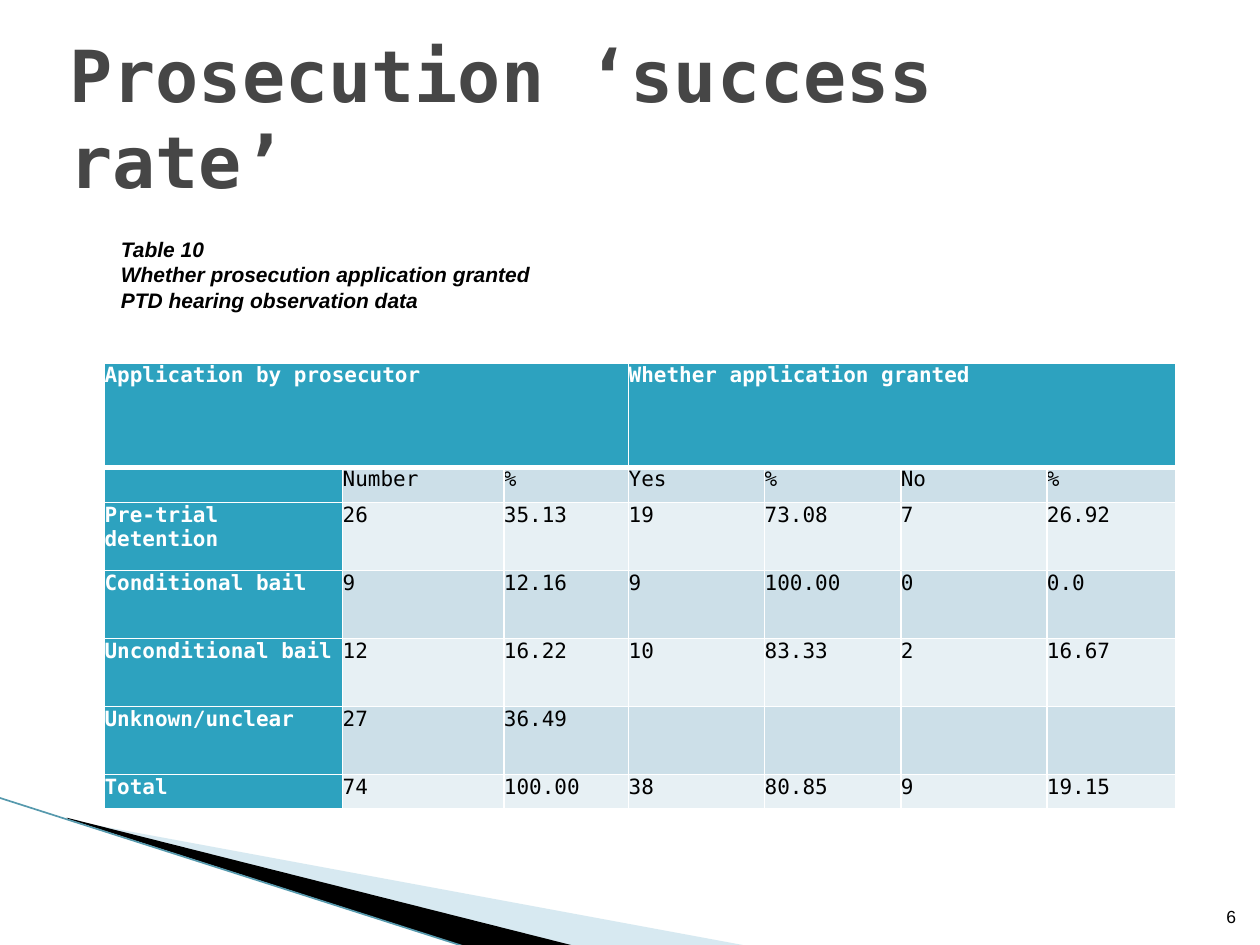
from lxml.etree import SubElement
from pptx import Presentation
from pptx.dml.color import RGBColor
from pptx.enum.shapes import MSO_CONNECTOR
from pptx.enum.text import MSO_ANCHOR, MSO_AUTO_SIZE, PP_ALIGN
from pptx.oxml import parse_xml
from pptx.oxml.ns import nsdecls, qn
from pptx.util import Inches, Pt

MONO, SANS = "DejaVu Sans Mono", "Arial"
TEAL, BANDS = "2DA2BF", ("E7F0F4", "CCDFE8")
BLACK, WHITE = "000000", "FFFFFF"

COLUMN_WIDTHS = (1.89, 1.28, 0.99, 1.08, 1.08, 1.16, 1.02)
ROW_HEIGHTS = (0.83, 0.28, 0.54, 0.54, 0.54, 0.54, 0.27)
HEADER_SPANS = ((0, 2), (3, 6))
RESULTS = (
    ("Application by prosecutor", "", "", "Whether application granted", "", "", ""),
    ("", "Number", "%", "Yes", "%", "No", "%"),
    ("Pre-trial detention", "26", "35.13", "19", "73.08", "7", "26.92"),
    ("Conditional bail", "9", "12.16", "9", "100.00", "0", "0.0"),
    ("Unconditional bail", "12", "16.22", "10", "83.33", "2", "16.67"),
    ("Unknown/unclear", "27", "36.49", "", "", "", ""),
    ("Total", "74", "100.00", "38", "80.85", "9", "19.15"),
)


def rgb(value):
    return RGBColor.from_string(value)


class SlideBuilder:
    def __init__(self, slide):
        self.slide = slide

    def style(self, paragraph, size, face, color, bold=False, italic=False):
        font = paragraph.font
        font.size, font.name = Pt(size), face
        font.bold, font.italic = bold, italic
        font.color.rgb = rgb(color)

    def frame(self, shape, anchor, wrap=True):
        frame = shape.text_frame
        frame.margin_left = frame.margin_right = Inches(0.05)
        frame.margin_top = frame.margin_bottom = Inches(0.05)
        frame.vertical_anchor, frame.word_wrap = anchor, wrap
        return frame

    def title(self, text, box):
        title = self.slide.shapes.title
        title.left, title.top, title.width, title.height = map(Inches, box)
        frame = self.frame(title, MSO_ANCHOR.MIDDLE)
        frame.auto_size = MSO_AUTO_SIZE.NONE
        frame.text = text
        frame.paragraphs[0].alignment = PP_ALIGN.LEFT
        self.style(frame.paragraphs[0], 41, MONO, "464646", bold=True)

    def text(self, lines, box, size, anchor=MSO_ANCHOR.TOP, align=PP_ALIGN.LEFT,
             wrap=True, emphasis=False):
        label = self.slide.shapes.add_textbox(*map(Inches, box))
        frame = self.frame(label, anchor, wrap)
        frame.text = "\n".join(lines)
        for paragraph in frame.paragraphs:
            paragraph.alignment = align
            self.style(paragraph, size, SANS, BLACK, emphasis, emphasis)

    def wedge(self, points, color, opacity=None):
        """Draw a filled polygon; opacity is a percentage."""
        start, *rest = [(Inches(x), Inches(y)) for x, y in points]
        outline = self.slide.shapes.build_freeform(*start)
        outline.add_line_segments(rest, close=True)
        wedge = outline.convert_to_shape()
        wedge.shadow.inherit = False
        wedge.fill.solid()
        wedge.fill.fore_color.rgb = rgb(color)
        wedge.line.fill.background()
        if opacity is not None:
            fill_color = wedge.fill._xPr.find(qn("a:solidFill"))[0]
            SubElement(fill_color, qn("a:alpha"), val=str(opacity * 1000))

    def line(self, start, end, color, width):
        line = self.slide.shapes.add_connector(
            MSO_CONNECTOR.STRAIGHT, *map(Inches, start + end))
        line.line.color.rgb = rgb(color)
        line.line.width = Pt(width)
        SubElement(line._element.spPr, qn("a:effectLst"))

    def borders(self, cell, **widths):
        """Give a cell white borders, with widths in points by side: L, R, T, B."""
        properties = cell._tc.get_or_add_tcPr()
        for side, width in widths.items():
            properties.append(parse_xml(
                f'<a:ln{side} {nsdecls("a")} w="{Pt(width)}"><a:solidFill>'
                f'<a:srgbClr val="{WHITE}"/></a:solidFill></a:ln{side}>'))

    def cell(self, cell, text, row, column):
        heading = row == 0 or column == 0
        cell.margin_left = cell.margin_right = 0
        cell.margin_top = cell.margin_bottom = 0
        self.borders(cell, L=1, R=1, T=3 if row == 1 else 1, B=3 if row == 0 else 1)
        cell.fill.solid()
        cell.fill.fore_color.rgb = rgb(TEAL if heading else BANDS[row % 2])
        cell.text = text
        paragraph = cell.text_frame.paragraphs[0]
        paragraph.alignment = PP_ALIGN.JUSTIFY
        self.style(paragraph, 12, MONO, WHITE if heading else BLACK, heading)
        if not text:
            SubElement(paragraph._p, qn("a:endParaRPr"), sz="1200")

    def table(self, rows, box):
        table = self.slide.shapes.add_table(
            len(rows), len(rows[0]), *map(Inches, box)).table
        for column, width in zip(table.columns, COLUMN_WIDTHS):
            column.width = Inches(width)
        for row, height in zip(table.rows, ROW_HEIGHTS):
            row.height = Inches(height)
        for r, values in enumerate(rows):
            for c, value in enumerate(values):
                self.cell(table.cell(r, c), value, r, c)
        for first, last in HEADER_SPANS:
            table.cell(0, first).merge(table.cell(0, last))


def main():
    deck = Presentation()
    deck.slide_width, deck.slide_height = Inches(10), Inches(7.5)
    builder = SlideBuilder(deck.slides.add_slide(deck.slide_layouts[5]))

    builder.wedge([(0.55, 6.51), (5.95, 7.51), (4.56, 7.51), (0.55, 6.5)], "9DCADC", 40)
    builder.wedge([(0.53, 6.49), (4.57, 7.51), (3.72, 7.52), (0.54, 6.5)], BLACK)
    builder.line((-0.01, 6.33), (3.71, 7.52), "5699AD", 0.95)

    builder.table(RESULTS, (0.83, 2.88, sum(COLUMN_WIDTHS), sum(ROW_HEIGHTS)))
    builder.text(["6"], (9.67, 7.16, 0.19, 0.25), 10, MSO_ANCHOR.BOTTOM,
                 PP_ALIGN.RIGHT, wrap=False)
    builder.title("Prosecution ‘success rate’", (0.5, 0.3, 9, 1.25))
    builder.text(["Table 10", "Whether prosecution application granted",
                  "PTD hearing observation data"],
                 (0.91, 1.83, 3.87, 0.68), 12, emphasis=True)

    deck.save("out.pptx")


if __name__ == "__main__":
    main()
